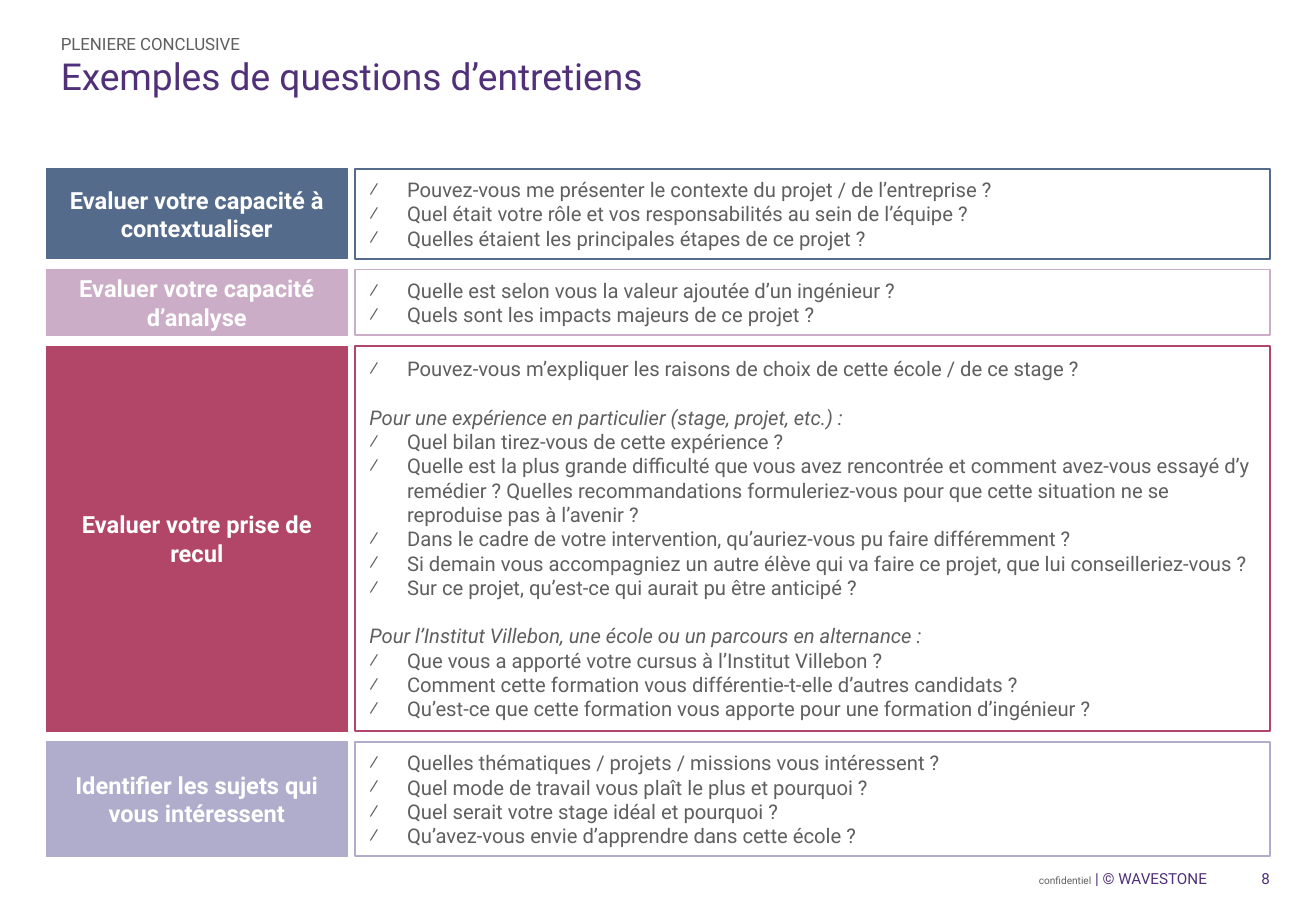
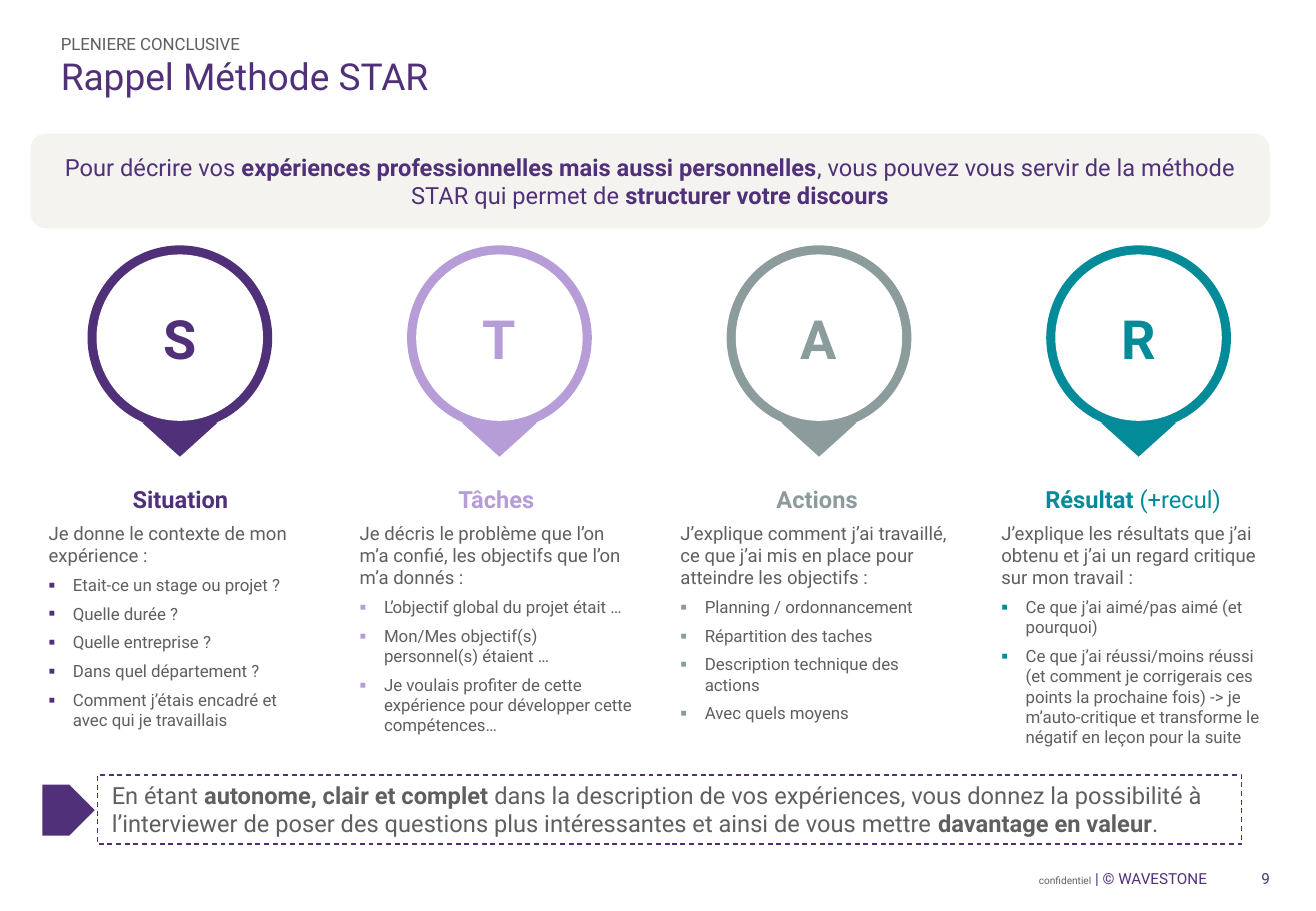
from lxml.etree import SubElement
from pptx import Presentation
from pptx.dml.color import RGBColor
from pptx.enum.dml import MSO_LINE
from pptx.enum.shapes import MSO_SHAPE
from pptx.enum.text import MSO_ANCHOR, MSO_AUTO_SIZE, PP_ALIGN
from pptx.oxml.ns import qn
from pptx.util import Inches, Pt

FONT = "Roboto"
PURPLE, GREY, WHITE, SAND = "503078", "5F5F5F", "FFFFFF", "F4F3F0"
WIDTH, HEIGHT = 10.83, 7.5
LEFT, RIGHT = 0.38, 10.45
SIDE = 0.12
SECTION = "PLENIERE CONCLUSIVE"
FOOTER = [("confidentiel", 6, GREY), (" ", 9, GREY), ("| © WAVESTONE", 9, PURPLE)]
FIRST_NUMBER = 8

QUESTIONS_TITLE = "Exemples de questions d’entretiens"
THEMES = [
    (0.74, "546B8C", "Evaluer votre capacité à contextualiser", [
        (None, ["Pouvez-vous me présenter le contexte du projet / de l’entreprise ?",
                "Quel était votre rôle et vos responsabilités au sein de l’équipe ?",
                "Quelles étaient les principales étapes de ce projet ?"])]),
    (0.54, "CCADC7", "Evaluer votre capacité d’analyse", [
        (None, ["Quelle est selon vous la valeur ajoutée d’un ingénieur ?",
                "Quels sont les impacts majeurs de ce projet ?"])]),
    (3.17, "B24669", "Evaluer votre prise de recul", [
        (None, ["Pouvez-vous m’expliquer les raisons de choix de cette école / de ce stage ?"]),
        ("Pour une expérience en particulier (stage, projet, etc.) :", [
            "Quel bilan tirez-vous de cette expérience ?",
            "Quelle est la plus grande difficulté que vous avez rencontrée et comment "
            "avez-vous essayé d’y remédier ? Quelles recommandations formuleriez-vous pour "
            "que cette situation ne se reproduise pas à l’avenir ?",
            "Dans le cadre de votre intervention, qu’auriez-vous pu faire différemment ?",
            "Si demain vous accompagniez un autre élève qui va faire ce projet, "
            "que lui conseilleriez-vous ?",
            "Sur ce projet, qu’est-ce qui aurait pu être anticipé ?"]),
        ("Pour l’Institut Villebon, une école ou un parcours en alternance :", [
            "Que vous a apporté votre cursus à l’Institut Villebon ?",
            "Comment cette formation vous différentie-t-elle d’autres candidats ?",
            "Qu’est-ce que cette formation vous apporte pour une formation d’ingénieur ?"])]),
    (0.94, "B0ADCC", "Identifier les sujets qui vous intéressent", [
        (None, ["Quelles thématiques / projets / missions vous intéressent ?",
                "Quel mode de travail vous plaît le plus et pourquoi ?",
                "Quel serait votre stage idéal et pourquoi ?",
                "Qu’avez-vous envie d’apprendre dans cette école ?"])]),
]

STAR_TITLE = "Rappel Méthode STAR"
INTRO = ("Pour décrire vos **expériences professionnelles mais aussi personnelles**, vous "
         "pouvez vous servir de la méthode STAR qui permet de **structurer votre discours**")
STEPS = [
    ("S", PURPLE, 2.41, "**Situation**", "Je donne le contexte de mon expérience :",
     ["Etait-ce un stage ou projet ?", "Quelle durée ?", "Quelle entreprise ?",
      "Dans quel département ?", "Comment j’étais encadré et avec qui je travaillais"]),
    ("T", "B79DD8", 2.49, "**Tâches**",
     "Je décris le problème que l’on m’a confié, les objectifs que l’on m’a donnés :",
     ["L’objectif global du projet était …", "Mon/Mes objectif(s) personnel(s) étaient …",
      "Je voulais profiter de cette expérience pour développer cette compétences…"]),
    ("A", "8C9B9C", 2.49, "**Actions**",
     "J’explique comment j’ai travaillé, ce que j’ai mis en place pour atteindre les objectifs :",
     ["Planning / ordonnancement", "Répartition des taches",
      "Description technique des actions", "Avec quels moyens"]),
    ("R", "048B9A", 2.41, "**Résultat **(+recul)",
     "J’explique les résultats que j’ai obtenu et j’ai un regard critique sur mon travail :",
     ["Ce que j’ai aimé/pas aimé (et pourquoi)",
      "Ce que j’ai réussi/moins réussi (et comment je corrigerais ces points la prochaine "
      "fois) -> je m’auto-critique et transforme le négatif en leçon pour la suite"]),
]
ADVICE = ("En étant **autonome, clair et complet **dans la description de vos expériences, vous "
          "donnez la possibilité à l’interviewer de poser des questions plus intéressantes et "
          "ainsi de vous mettre **davantage en valeur**.")


def color(value):
    return RGBColor.from_string(value)


def place(part, left, top, width, height):
    part.left, part.top, part.width, part.height = map(Inches, (left, top, width, height))


def set_frame(part, anchor=MSO_ANCHOR.MIDDLE, side=SIDE, edge=0.08):
    frame = part.text_frame
    frame.word_wrap = True
    frame.auto_size = MSO_AUTO_SIZE.NONE
    frame.vertical_anchor = anchor
    frame.margin_left = frame.margin_right = Inches(side)
    frame.margin_top = frame.margin_bottom = Inches(edge)
    return frame


def add_text(slide, box, **frame_style):
    return set_frame(slide.shapes.add_textbox(*map(Inches, box)), **frame_style)


def add_figure(slide, kind, box, fill=None, line=None, weight=0.75):
    figure = slide.shapes.add_shape(kind, *map(Inches, box))
    figure.shadow.inherit = False
    if fill:
        figure.fill.solid()
        figure.fill.fore_color.rgb = color(fill)
    else:
        figure.fill.background()
    if line:
        figure.line.color.rgb = color(line)
        figure.line.width = Pt(weight)
    else:
        figure.line.fill.background()
    return figure


def add_bullet(paragraph, char, indent, tint):
    props = paragraph._p.get_or_add_pPr()
    props.set("marL", str(Inches(indent)))
    props.set("indent", str(-Inches(indent)))
    SubElement(SubElement(props, qn("a:buClr")), qn("a:srgbClr")).set("val", tint)
    SubElement(props, qn("a:buFont")).set("typeface", FONT)
    SubElement(props, qn("a:buChar")).set("char", char)


def style(font, size, tint):
    font.name, font.size = FONT, Pt(size)
    font.color.rgb = color(tint)


def write(frame, text, size, tint=GREY, align=PP_ALIGN.LEFT, before=0,
          bullet=None, bold=None, italic=None):
    first = not frame.text
    paragraph = frame.paragraphs[0] if first else frame.add_paragraph()
    if bullet:
        add_bullet(paragraph, *bullet)
    paragraph.alignment = align
    paragraph.space_before = Pt(0 if first else before)
    style(paragraph.font, size, tint)
    paragraph.font.bold, paragraph.font.italic = bold, italic
    for index, piece in enumerate(text.split("**")):
        if piece:
            run = paragraph.add_run()
            run.text = piece
            if index % 2:
                run.font.bold = True


def add_footer(slide, number):
    mention = add_text(slide, (8.25, 7.11, 1.78, 0.25), side=0.1, edge=0.05).paragraphs[0]
    mention.alignment = PP_ALIGN.RIGHT
    for text, size, tint in FOOTER:
        run = mention.add_run()
        run.text = text
        style(run.font, size, tint)
    page = add_text(slide, (10.06, 7.11, 0.39, 0.25), side=0, edge=0).paragraphs[0]
    page.alignment = PP_ALIGN.RIGHT
    style(page.font, 9, PURPLE)
    field = SubElement(page._p, qn("a:fld"))
    field.set("id", "{B6F15528-21DE-4FAA-801E-634DDDAF4B2B}")
    field.set("type", "slidenum")
    SubElement(field, qn("a:rPr")).set("lang", "fr-FR")
    SubElement(field, qn("a:t")).text = str(number)


def start_slide(deck, title):
    slide = deck.slides.add_slide(deck.slide_layouts[5])
    place(slide.shapes.title, LEFT, 0.44, 10.08, 0.94)
    write(set_frame(slide.shapes.title, MSO_ANCHOR.TOP, edge=0), title, 22, PURPLE)
    section = add_text(slide, (LEFT, 0.16, 10.08, 0.28), anchor=MSO_ANCHOR.BOTTOM, edge=0)
    write(section, SECTION, 10, align=PP_ALIGN.JUSTIFY)
    add_footer(slide, FIRST_NUMBER + len(deck.slides) - 1)
    return slide


def build_questions(deck):
    slide = start_slide(deck, QUESTIONS_TITLE)
    label_width, list_left, top, gap = 2.48, 2.92, 1.39, 0.09
    for height, tint, label, groups in THEMES:
        theme = add_figure(slide, MSO_SHAPE.RECTANGLE, (LEFT, top, label_width, height), tint, tint)
        write(set_frame(theme), label, 14, WHITE, PP_ALIGN.CENTER, bold=True)
        questions = set_frame(add_figure(
            slide, MSO_SHAPE.RECTANGLE, (list_left, top, RIGHT - list_left, height),
            line=tint, weight=1))
        for lead, items in groups:
            if lead:
                write(questions, lead, 12, before=14.4, italic=True)
            for item in items:
                write(questions, item, 12, bullet=("⁄", 0.31, GREY))
        top += height + gap


def add_pin(slide, letter, tint, left):
    top, outer, inner, tip = 2.02, 1.52, 1.37, 0.62
    inset = (outer - inner) / 2
    add_figure(slide, MSO_SHAPE.OVAL, (left, top, outer, outer), tint)
    pointer = add_figure(slide, MSO_SHAPE.ISOSCELES_TRIANGLE,
                         (left + (outer - tip) / 2, 3.48, tip, 0.28), tint)
    pointer.rotation = 180
    disc = add_figure(slide, MSO_SHAPE.OVAL, (left + inset, top + inset, inner, inner), WHITE)
    write(set_frame(disc), letter, 32, tint, PP_ALIGN.CENTER, bold=True)


def build_star(deck):
    slide = start_slide(deck, STAR_TITLE)
    intro = add_figure(slide, MSO_SHAPE.ROUNDED_RECTANGLE, (0.25, 1.1, 10.2, 0.78), SAND)
    write(set_frame(intro), INTRO, 14, PURPLE, PP_ALIGN.CENTER)

    left, gap, pin_left, pin_pitch = 0.28, 0.15, 0.72, 2.63
    for index, (letter, tint, width, heading, lead, items) in enumerate(STEPS):
        add_pin(slide, letter, tint, pin_left + index * pin_pitch)
        step = add_text(slide, (left, 3.87, width, 2.22), anchor=MSO_ANCHOR.TOP, edge=SIDE)
        write(step, heading, 14, tint, PP_ALIGN.CENTER)
        write(step, lead, 11, before=5)
        for item in items:
            write(step, item, 10, before=5, bullet=("▪", 0.2, tint))
        left += width + gap

    advice = add_figure(slide, MSO_SHAPE.RECTANGLE, (0.8, 6.38, 9.42, 0.57), line=PURPLE)
    advice.line.dash_style = MSO_LINE.DASH
    write(set_frame(advice, MSO_ANCHOR.TOP, edge=0.05), ADVICE, 14)
    add_figure(slide, MSO_SHAPE.PENTAGON, (0.35, 6.46, 0.43, 0.42), PURPLE)


def main():
    deck = Presentation()
    deck.slide_width, deck.slide_height = Inches(WIDTH), Inches(HEIGHT)
    deck.element.set("firstSlideNum", str(FIRST_NUMBER))
    build_questions(deck)
    build_star(deck)
    deck.save("out.pptx")


if __name__ == "__main__":
    main()
